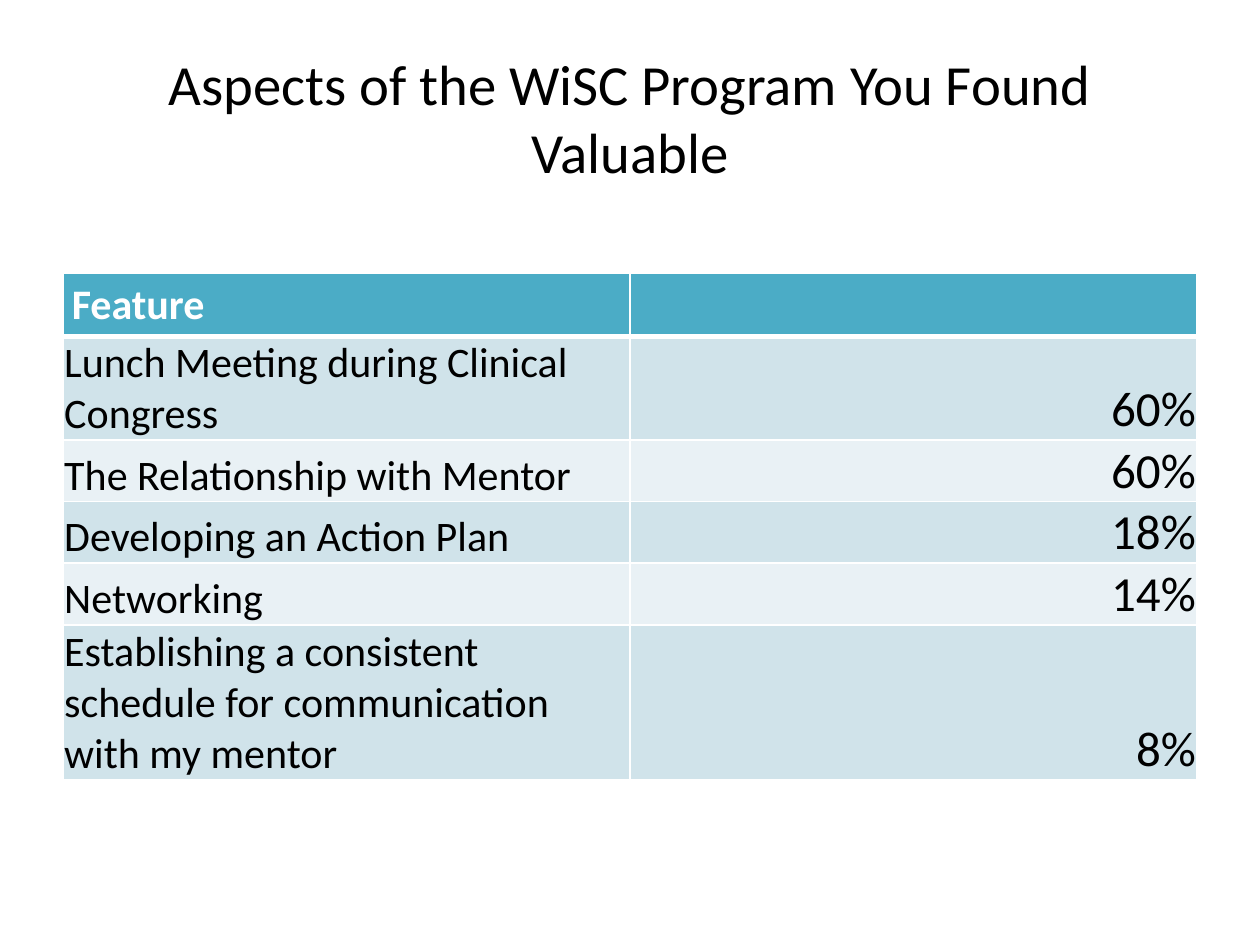
from lxml import etree
from pptx import Presentation
from pptx.dml.color import RGBColor
from pptx.enum.text import MSO_ANCHOR, PP_ALIGN
from pptx.oxml.ns import qn
from pptx.util import Inches, Pt

MIDDLE, BOTTOM = MSO_ANCHOR.MIDDLE, MSO_ANCHOR.BOTTOM
LEFT, CENTER, RIGHT = PP_ALIGN.LEFT, PP_ALIGN.CENTER, PP_ALIGN.RIGHT

TITLE = "Aspects of the WiSC Program You Found Valuable"
HEADER = ("Feature", "")
FEATURES = [
    ("Lunch Meeting during Clinical Congress", "60%"),
    ("The Relationship with Mentor", "60%"),
    ("Developing an Action Plan", "18%"),
    ("Networking", "14%"),
    ("Establishing a consistent schedule for communication with my mentor", "8%"),
]
ROW_HEIGHTS = [0.5, 0.82, 0.49, 0.49, 0.49, 1.23]
COLUMN_WIDTH = 4.5
FONT = "Calibri"
BLACK, WHITE, TEAL = "000000", "FFFFFF", "4BACC6"
BANDS = ("D0E3EA", "E9F1F5")
HEADER_INSETS = (0.07, 0.05, 0.07, 0.05)
BODY_INSETS = (0.01, 0.01, 0.01, 0)


def color(value):
    return RGBColor.from_string(value)


def write(frame, text, size, ink, align, bold=False):
    para = frame.paragraphs[0]
    para.text = text
    para.alignment = align
    font = para.font
    font.name, font.size, font.bold = FONT, Pt(size), bold
    font.color.rgb = color(ink)


def set_borders(cell, widths):
    """Draw white borders; widths are points for left, right, top, bottom."""
    properties = cell._tc.get_or_add_tcPr()
    for index, (side, width) in enumerate(zip("LRTB", widths)):
        line = etree.Element(qn(f"a:ln{side}"), w=str(Pt(width)))
        fill = etree.SubElement(line, qn("a:solidFill"))
        etree.SubElement(fill, qn("a:srgbClr"), val=WHITE)
        properties.insert(index, line)


def style_cell(cell, fill, insets, borders):
    cell.fill.solid()
    cell.fill.fore_color.rgb = color(fill)
    (cell.margin_left, cell.margin_top,
     cell.margin_right, cell.margin_bottom) = map(Inches, insets)
    set_borders(cell, borders)


def add_title(page):
    box = page.shapes.add_textbox(Inches(0.5), Inches(0.3), Inches(9), Inches(1.25))
    frame = box.text_frame
    frame.word_wrap = True
    frame.vertical_anchor = MIDDLE
    write(frame, TITLE, 32.4, BLACK, CENTER)


def add_feature_table(page):
    table = page.shapes.add_table(
        len(ROW_HEIGHTS), len(HEADER), Inches(0.5), Inches(2.17),
        Inches(COLUMN_WIDTH * len(HEADER)), Inches(sum(ROW_HEIGHTS))).table
    for column in table.columns:
        column.width = Inches(COLUMN_WIDTH)
    for row, height in zip(table.rows, ROW_HEIGHTS):
        row.height = Inches(height)

    for column, text in enumerate(HEADER):
        cell = table.cell(0, column)
        style_cell(cell, TEAL, HEADER_INSETS, (1, 1, 1, 3))
        write(cell.text_frame, text, 24, WHITE, LEFT, bold=True)

    for row, feature in enumerate(FEATURES, start=1):
        top = 3 if row == 1 else 1
        for column, (text, size, align) in enumerate(zip(feature, (24, 28), (LEFT, RIGHT))):
            cell = table.cell(row, column)
            style_cell(cell, BANDS[(row - 1) % 2], BODY_INSETS, (1, 1, top, 1))
            cell.vertical_anchor = BOTTOM
            write(cell.text_frame, text, size, BLACK, align)


def main():
    deck = Presentation()
    deck.slide_width, deck.slide_height = Inches(10), Inches(7.5)
    page = deck.slides.add_slide(deck.slide_layouts[6])
    add_title(page)
    add_feature_table(page)
    deck.save("out.pptx")


if __name__ == "__main__":
    main()
